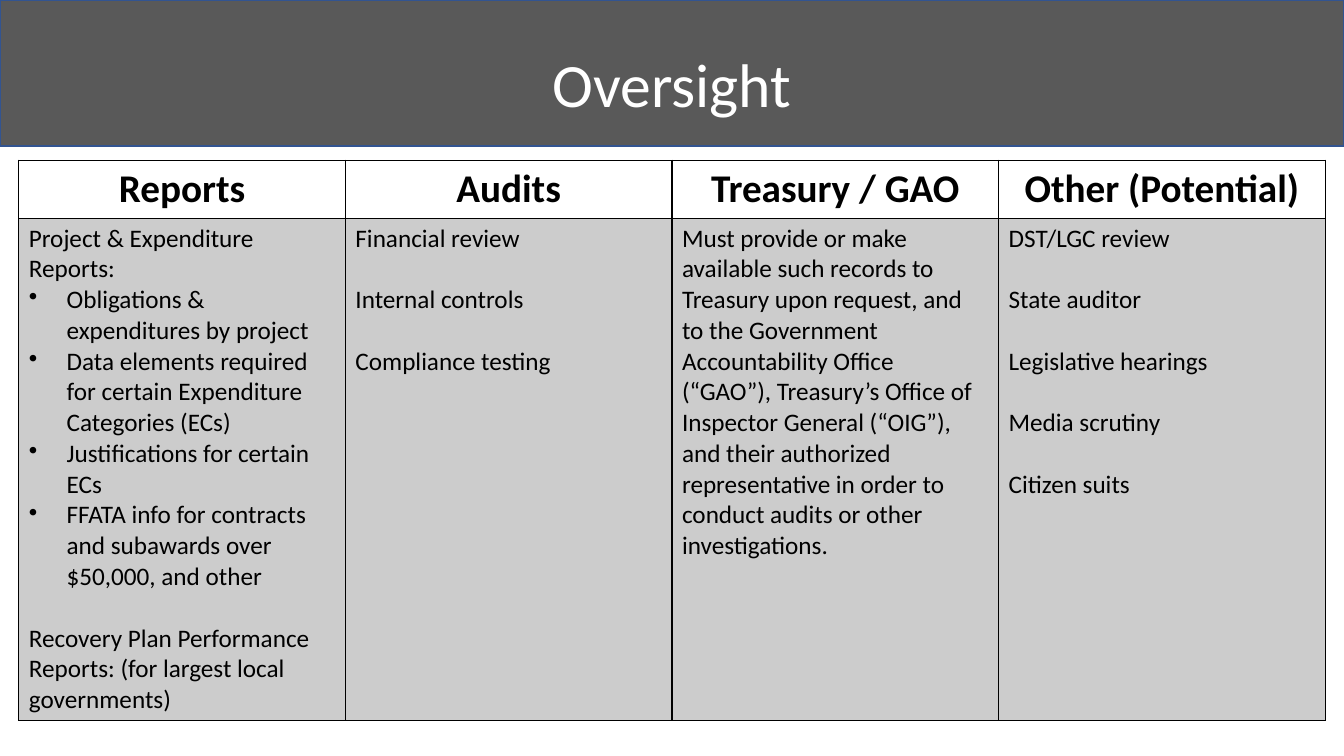
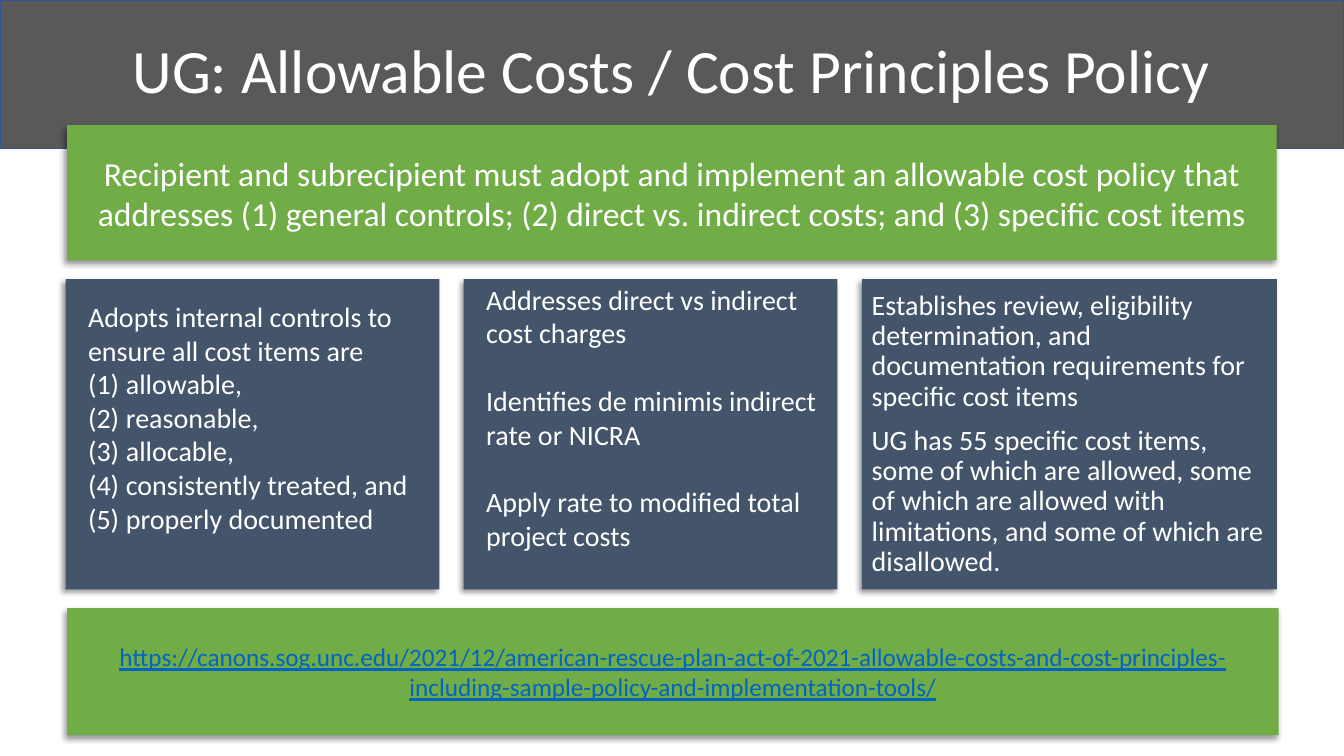
from lxml.etree import SubElement
from pptx import Presentation
from pptx.dml.color import RGBColor
from pptx.enum.shapes import MSO_SHAPE
from pptx.enum.text import MSO_ANCHOR, PP_ALIGN
from pptx.oxml.ns import qn
from pptx.util import Pt

COLORS = {
    "band": "595959",
    "band line": "325491",
    "green": "70AD47",
    "slate": "44546A",
    "cell": "CCCCCC",
    "link": "0563C1",
    "white": "FFFFFF",
    "black": "000000",
}
FONT = "Calibri"

# Paragraph formats
CENTER = {"alignment": PP_ALIGN.CENTER}
TITLE = {"alignment": PP_ALIGN.CENTER, "line_spacing": 0.9}
TIGHT = {"line_spacing": 0.9}
TIGHT_NEXT = {"line_spacing": 0.9, "space_before": Pt(10)}
TABLE_GAP = {"space_before": Pt(22)}
PANEL_GAP = {"space_before": Pt(24.4)}

# List formats: left margin, first-line indent, marker tag and its attributes
PLAIN = None
BULLET = (27, -27, "a:buChar", {"char": "•"})
NUMBER = (36, -27, "a:buAutoNum", {"type": "arabicParenBoth"})
INDENT = (9, 0, "a:buNone", {})


def rgb(name):
    return RGBColor.from_string(COLORS[name])


def set_values(target, values):
    for name, value in values.items():
        setattr(target, name, value)


def mark_list(para, marker):
    margin, indent, tag, attributes = marker
    properties = para._p.get_or_add_pPr()
    properties.set("marL", str(Pt(margin)))
    properties.set("indent", str(Pt(indent)))
    SubElement(properties, qn(tag), attributes)


def write(frame, lines, size, color, **font_values):
    """Each line is (text, paragraph format, list format)."""
    for index, (text, layout, marker) in enumerate(lines):
        para = frame.add_paragraph() if index else frame.paragraphs[0]
        if marker:
            mark_list(para, marker)
        set_values(para, layout)
        span = para.add_run()
        span.text = text
        set_values(span.font, {"name": FONT, "size": Pt(size), **font_values})
        span.font.color.rgb = rgb(color)


def spaced(texts, gap, marker=PLAIN):
    return [(text, gap if index else {}, marker) for index, text in enumerate(texts)]


def add_rectangle(page, place, fill, line=None):
    box = page.shapes.add_shape(MSO_SHAPE.RECTANGLE, *map(Pt, place))
    box.shadow.inherit = False
    box.fill.solid()
    box.fill.fore_color.rgb = rgb(fill)
    if line:
        box.line.color.rgb = rgb(line)
        box.line.width = Pt(1)
    else:
        box.line.fill.background()
    return box


def add_shadow(box):
    effects = box._element.spPr.find(qn("a:effectLst"))
    shadow = SubElement(effects, qn("a:outerShdw"), {
        "blurRad": str(Pt(4)), "dist": str(Pt(3)),
        "dir": str(135 * 60000), "algn": "tr", "rotWithShape": "0"})
    color = SubElement(shadow, qn("a:srgbClr"), val=COLORS["black"])
    SubElement(color, qn("a:alpha"), val="40000")


def add_panel(page, place, fill, lines, size, color="white", bottom=3.6, **font_values):
    box = add_rectangle(page, place, fill)
    add_shadow(box)
    set_values(box.text_frame, {
        "word_wrap": True, "vertical_anchor": MSO_ANCHOR.MIDDLE,
        "margin_bottom": Pt(bottom)})
    lines = [(text, {"alignment": PP_ALIGN.LEFT, **layout}, marker)
             for text, layout, marker in lines]
    write(box.text_frame, lines, size, color, **font_values)


def add_title(page, text, top, band_height):
    add_rectangle(page, (0, 0, 960, band_height), "band", "band line")
    box = page.shapes.add_textbox(Pt(66), Pt(top), Pt(828), Pt(104.4))
    set_values(box.text_frame, {"word_wrap": True, "vertical_anchor": MSO_ANCHOR.MIDDLE})
    write(box.text_frame, [(text, TITLE, PLAIN)], 44, "white")


def add_borders(cell):
    properties = cell._tc.get_or_add_tcPr()
    for side in ("a:lnL", "a:lnR", "a:lnT", "a:lnB"):
        line = SubElement(properties, qn(side), w=str(Pt(1)))
        fill = SubElement(line, qn("a:solidFill"))
        SubElement(fill, qn("a:srgbClr"), val=COLORS["black"])


def add_column_table(page, place, row_heights, columns):
    """Each column is (heading, lines)."""
    table = page.shapes.add_table(2, len(columns), *map(Pt, place)).table
    set_values(table, {"first_row": False, "horz_banding": False})
    for row, height in zip(table.rows, row_heights):
        row.height = Pt(height)
    for index, (heading, lines) in enumerate(columns):
        head, body = table.cell(0, index), table.cell(1, index)
        for cell, fill in ((head, "white"), (body, "cell")):
            add_borders(cell)
            cell.fill.solid()
            cell.fill.fore_color.rgb = rgb(fill)
        write(head.text_frame, [(heading, CENTER, PLAIN)], 28, "black", bold=True)
        write(body.text_frame, lines, 18, "black", bold=False)


def build_oversight(page):
    add_title(page, "Oversight", 10, 104.4)
    reports = [
        ("Project & Expenditure Reports:", {}, PLAIN),
        ("Obligations & expenditures by project", {}, BULLET),
        ("Data elements required for certain Expenditure Categories (ECs)", {}, BULLET),
        ("Justifications for certain ECs", {}, BULLET),
        ("FFATA info for contracts and subawards over $50,000, and other", {}, BULLET),
        ("Recovery Plan Performance Reports: (for largest local governments)",
         TABLE_GAP, PLAIN),
    ]
    audits = ["Financial review", "Internal controls", "Compliance testing"]
    records = (
        "Must provide or make available such records to Treasury upon request, "
        "and to the Government Accountability Office (“GAO”), Treasury’s Office of "
        "Inspector General (“OIG”), and their authorized representative in order to "
        "conduct audits or other investigations.")
    others = ["DST/LGC review", "State auditor", "Legislative hearings",
              "Media scrutiny", "Citizen suits"]
    add_column_table(page, (13.4, 114.4, 933.2, 400), (41.4, 358.6), [
        ("Reports", reports),
        ("Audits", spaced(audits, TABLE_GAP)),
        ("Treasury / GAO", spaced([records], TABLE_GAP)),
        ("Other (Potential)", spaced(others, TABLE_GAP)),
    ])


def build_allowable_costs(page):
    add_title(page, "UG: Allowable Costs / Cost Principles Policy", 0, 106)

    # Requirement
    requirement = (
        "Recipient and subrecipient must adopt and implement an allowable cost policy "
        "that addresses (1) general controls; (2) direct vs. indirect costs; "
        "and (3) specific cost items")
    add_panel(page, (48, 89.5, 864, 96.5), "green", [(requirement, CENTER, PLAIN)], 24)

    # Three policy parts
    criteria = ["allowable,", "reasonable,", "allocable,",
                "consistently treated, and", "properly documented"]
    controls = [("Adopts internal controls to ensure all cost items are", {}, INDENT)]
    controls += [(text, {}, NUMBER) for text in criteria]
    charges = spaced([
        "Addresses direct vs indirect cost charges",
        "Identifies de minimis indirect rate or NICRA",
        "Apply rate to modified total project costs",
    ], PANEL_GAP, INDENT)
    cost_items = [
        ("Establishes review, eligibility determination, and documentation "
         "requirements for specific cost items", TIGHT, PLAIN),
        ("UG has 55 specific cost items, some of which are allowed, some of which are "
         "allowed with limitations, and some of which are disallowed.",
         TIGHT_NEXT, PLAIN),
    ]
    parts = [(controls, 267, 28), (charges, 267, 28), (cost_items, 296.5, 3.6)]
    for index, (lines, width, bottom) in enumerate(parts):
        place = (46.8 + index * 284.4, 199.4, width, 221.6)
        add_panel(page, place, "slate", lines, 20, bottom=bottom)

    # Reference
    address = (
        "https://canons.sog.unc.edu/2021/12/american-rescue-plan-act-of-2021-"
        "allowable-costs-and-cost-principles-including-sample-policy-and-"
        "implementation-tools/")
    add_panel(page, (48, 434.4, 865.4, 90.8), "green", [(address, CENTER, PLAIN)],
              18, "link", underline=True)


def main():
    deck = Presentation()
    set_values(deck, {"slide_width": Pt(960), "slide_height": Pt(540)})
    for build in (build_oversight, build_allowable_costs):
        build(deck.slides.add_slide(deck.slide_layouts[6]))
    deck.save("out.pptx")


if __name__ == "__main__":
    main()
